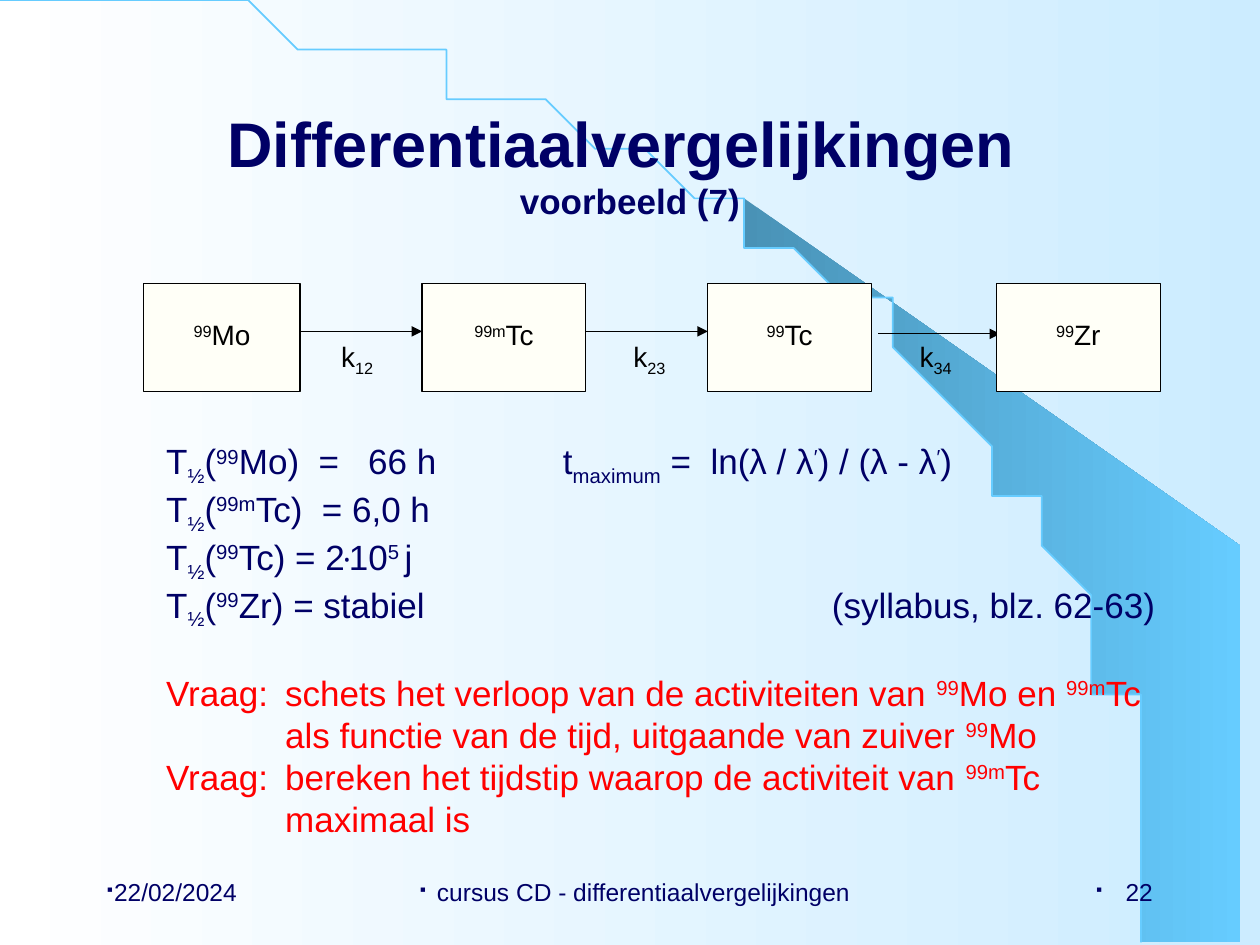
from pptx import Presentation
from pptx.dml.color import RGBColor
from pptx.enum.shapes import MSO_CONNECTOR as CONN, MSO_SHAPE as SHAPE
from pptx.enum.text import MSO_ANCHOR as ANCHOR, MSO_AUTO_SIZE as AUTO, PP_ALIGN as ALIGN
from pptx.oxml.ns import qn
from pptx.util import Cm, Pt
from lxml.etree import SubElement

NAVY, RED, BLACK, SKY, IVORY = "000066", "FF0000", "000000", "66CCFF", "FFFFF7"


def rgb(value):
    return RGBColor.from_string(value)


def write(p, text, size=20, color=NAVY, bold=False, align=ALIGN.LEFT, spacing=None, before=None):
    """Add runs to p; '|' parts them, a leading ^ raises and a leading _ lowers."""
    p.alignment = align
    if spacing:
        p.line_spacing = spacing
    if before:
        p.space_before = Pt(before)
    for part in text.split("|"):
        r = p.add_run()
        r.text = part.lstrip("^_")
        r.font.size, r.font.bold = Pt(size), bold
        r.font.name = "Cambria" if part == "·" else "Arial"
        r.font.color.rgb = rgb(color)
        if part[0] in "^_":
            r.font._element.set("baseline", "30000" if part[0] == "^" else "-25000")


prs = Presentation()
prs.slide_width, prs.slide_height = Cm(25.4), Cm(19.05)
s = prs.slides.add_slide(prs.slide_layouts[5])

# Background and swoosh: the wedge follows the lower part of the curve
bg = s.background.fill
bg.gradient()
bg.gradient_angle = 0

curve = []
for i in range(51):
    t = i / 50
    a, b, c = 3 * t * (1 - t) ** 2, 3 * t * t * (1 - t), t ** 3
    curve.append((12.9 * a + 23.37 * (b + c), 8.51 * b + 19.02 * c))
wedge = curve[22:] + [(25.4, 19.05), (25.4, 10.74)]

swoosh = []
for points, closed in ((wedge, True), (curve, False)):
    fb = s.shapes.build_freeform(*points[0], scale=Cm(1))
    fb.add_line_segments(points[1:], close=closed)
    sp = fb.convert_to_shape()
    sp.shadow.inherit = False
    swoosh.append(sp)
swoosh[0].line.fill.background()
swoosh[0].fill.gradient()
swoosh[0].fill.gradient_angle = 0
swoosh[1].fill.background()
swoosh[1].line.color.rgb, swoosh[1].line.width = rgb(SKY), Pt(1)

for fill, colors in ((bg, ("FFFFFF", "CCECFF")), (swoosh[0].fill, ("4992B6", SKY))):
    for stop, position, color in zip(fill.gradient_stops, (0, 1), colors):
        stop.position, stop.color.rgb = position, rgb(color)

# Title, moved in front of the swoosh
title = s.shapes.title
s.shapes._spTree.append(title._element)
title.left, title.top, title.width, title.height = Cm(1.9), Cm(1.7), Cm(21.6), Cm(3.18)
tf = title.text_frame
tf.auto_size, tf.vertical_anchor = AUTO.NONE, ANCHOR.MIDDLE
p = tf.paragraphs[0]
write(p, "Differentiaalvergelijkingen ", size=36, bold=True, align=ALIGN.CENTER)
p.add_line_break()
write(p, "voorbeeld (7)", bold=True, align=ALIGN.CENTER)

# Half-lives and questions
tf = s.shapes.add_textbox(Cm(3.1), Cm(8.74), Cm(20.8), Cm(8.79)).text_frame
tf.word_wrap = True
half_lives = [
    "^99|Mo)  =   66 h\tt|_maximum| =  ln(λ / λ|^′|) / (λ - λ|^′|)",
    "^99m|Tc)  = 6,0 h",
    "^99|Tc) = 2|·|10|^5 |j",
    "^99|Zr) = stabiel\t\t(syllabus, blz. 62-63)",
]
for i, text in enumerate(half_lives):
    p = tf.add_paragraph() if i else tf.paragraphs[0]
    write(p, "T|_½|(|" + text)
    tabs = SubElement(p._p.get_or_add_pPr(), qn("a:tabLst"))
    for position in (8, 13.42):
        SubElement(tabs, qn("a:tab"), pos=str(Cm(position)), algn="l")

questions = [
    ("schets het verloop van de activiteiten van |^99|Mo en |^99m|Tc"
     " als functie van de tijd, uitgaande van zuiver |^99|Mo", 23),
    ("bereken het tijdstip waarop de activiteit van |^99m|Tc maximaal is", None),
]
for text, before in questions:
    p = tf.add_paragraph()
    write(p, "Vraag:\t" + text, color=RED, before=before)
    pPr = p._p.get_or_add_pPr()
    pPr.set("marL", str(Cm(2.4)))
    pPr.set("indent", str(-Cm(2.4)))

# Decay chain: arrows with rate constants, then nuclides
chain = dict(size=16, color=BLACK, align=ALIGN.CENTER, spacing=0.8, before=3)
arrows = [(6.05, 6.68, 6.45, "12"), (11.81, 6.68, 12.34, "23"), (17.7, 6.73, 18.11, "34")]
for x, y, label_x, index in arrows:
    line = s.shapes.add_connector(CONN.STRAIGHT, Cm(x), Cm(y), Cm(x + 2.46), Cm(y))
    line.line.color.rgb, line.line.width = rgb(BLACK), Pt(0.75)
    SubElement(line.line._get_or_add_ln(), qn("a:tailEnd"), type="triangle")
    SubElement(line._element.spPr, qn("a:effectLst"))
    tf = s.shapes.add_textbox(Cm(label_x), Cm(6.83), Cm(1.5), Cm(0.7)).text_frame
    tf.word_wrap = True
    tf.margin_left = tf.margin_right = Cm(0.18)
    tf.margin_top = tf.margin_bottom = Cm(0.08)
    write(tf.paragraphs[0], "k|_" + index, **chain)

nuclides = [(2.9, 3.15, "^99|Mo"), (8.51, 3.3, "^99m|Tc"),
            (14.27, 3.3, "^99|Tc"), (20.09, 3.3, "^99|Zr")]
for x, width, text in nuclides:
    sp = s.shapes.add_shape(SHAPE.RECTANGLE, Cm(x), Cm(5.72), Cm(width), Cm(2.18))
    sp.shadow.inherit = False
    sp.fill.solid()
    sp.fill.fore_color.rgb = rgb(IVORY)
    sp.line.color.rgb, sp.line.width = rgb(BLACK), Pt(0.75)
    sp.text_frame.vertical_anchor = ANCHOR.MIDDLE
    write(sp.text_frame.paragraphs[0], text, **chain)

# Footer: date, course and slide number, each with a small square bullet
footers = [
    (1.9, 5.28, "22/02/2024", ALIGN.LEFT, 0.15),
    (8.1, 9.4, "cursus CD - differentiaalvergelijkingen", ALIGN.CENTER, 0.35),
    (18.21, 5.28, "22", ALIGN.RIGHT, 0.6),
]
for x, width, text, align, gap in footers:
    tf = s.shapes.add_textbox(Cm(x), Cm(17.35), Cm(width), Cm(1.27)).text_frame
    tf.word_wrap, tf.vertical_anchor = True, ANCHOR.MIDDLE
    p = tf.paragraphs[0]
    write(p, text, size=14, align=align)
    pPr = p._p.get_or_add_pPr()
    pPr.set("marL", str(Cm(gap)))
    pPr.set("indent", str(-Cm(gap)))
    SubElement(pPr, qn("a:buSzPct"), val="60000")
    SubElement(pPr, qn("a:buFont"), typeface="Wingdings")
    SubElement(pPr, qn("a:buChar"), char="§")

prs.save("out.pptx")
